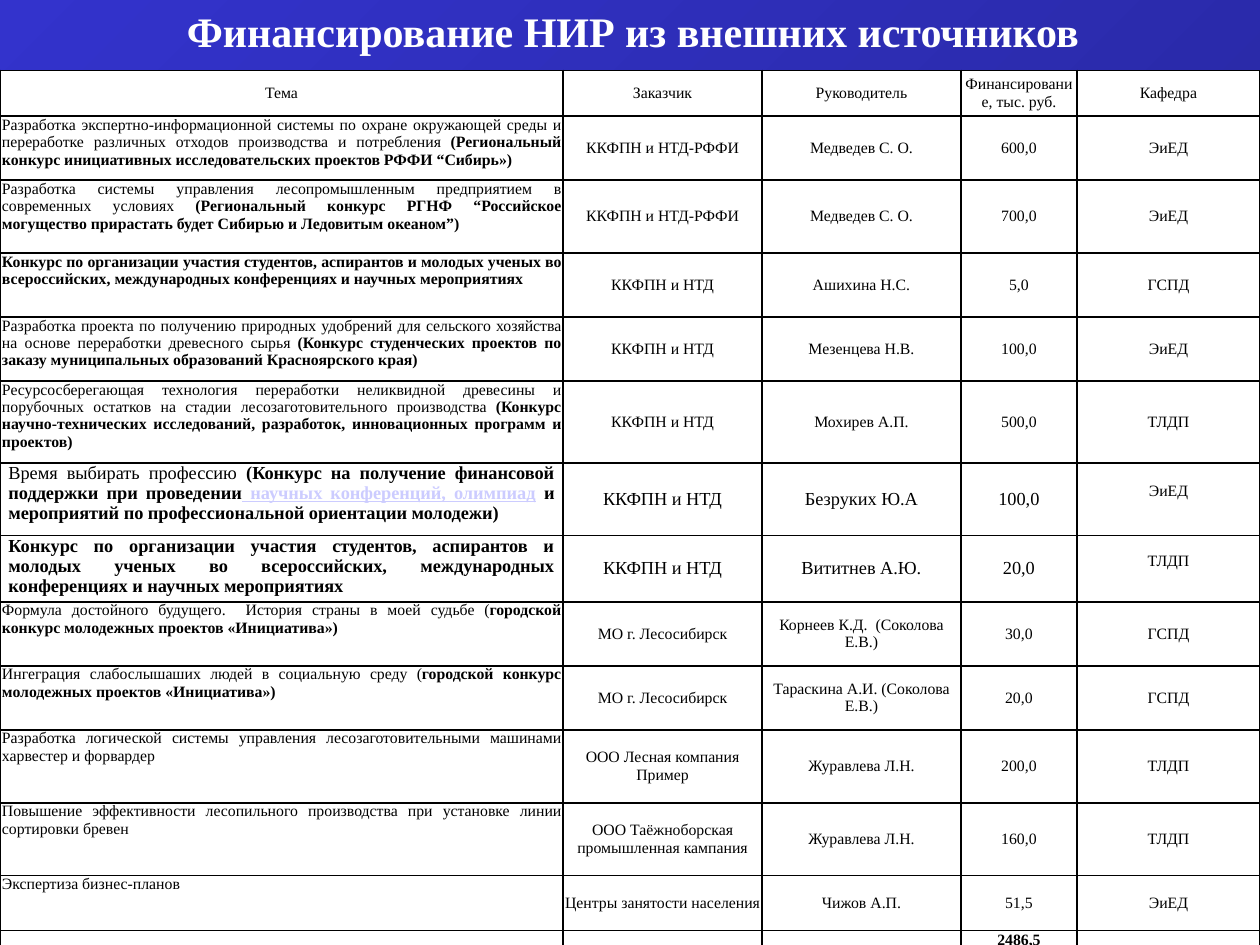
from lxml import etree
from pptx import Presentation
from pptx.dml.color import RGBColor
from pptx.enum import text as t
from pptx.oxml import ns
from pptx.util import Cm, Pt

HUES = {"ink": "000000", "paper": "FFFFFF", "link": "CCCCFF",
        "start": "3333CC", "end": "242492"}
FONT = "Times New Roman"
COLS = [11.35, 4.01, 4.01, 2.34, 3.69]
TALL = [0.92, 1.29, 1.47, 1.29, 1.29, 1.65, 1.47, 1.29, 1.29, 1.29,
        1.47, 1.47, 1.1, 0.36]
LARGE = (6, 7)
FUND = "ККФПН и НТД"
EVENT = ("|Конкурс по организации участия студентов, аспирантов и молодых ученых во "
         "всероссийских, международных конференциях и научных мероприятиях")
YOUTH = "(|городской конкурс молодежных проектов «Инициатива»)"
ROWS = [
    ("Тема", "Заказчик", "Руководитель", "Финансирование, тыс. руб.", "Кафедра"),
    ("Разработка экспертно-информационной системы по охране окружающей среды и "
     "переработке различных отходов производства и потребления |(Региональный "
     "конкурс инициативных исследовательских проектов РФФИ “Сибирь»)",
     FUND + "-РФФИ", "Медведев С. О.", "600,0", "ЭиЕД"),
    ("Разработка системы управления лесопромышленным предприятием в современных "
     "условиях |(Региональный конкурс РГНФ “Российское могущество прирастать "
     "будет Сибирью и Ледовитым океаном”)",
     FUND + "-РФФИ", "Медведев С. О.", "700,0", "ЭиЕД"),
    (EVENT, FUND, "Ашихина Н.С.", "5,0", "ГСПД"),
    ("Разработка проекта по получению природных удобрений для сельского хозяйства "
     "на основе переработки древесного сырья |(Конкурс студенческих проектов по "
     "заказу муниципальных образований Красноярского края)",
     FUND, "Мезенцева Н.В.", "100,0", "ЭиЕД"),
    ("Ресурсосберегающая технология переработки неликвидной древесины и порубочных "
     "остатков на стадии лесозаготовительного производства |(Конкурс "
     "научно-технических исследований, разработок, инновационных программ и проектов)",
     FUND, "Мохирев А.П.", "500,0", "ТЛДП"),
    ("Время выбирать профессию |(Конкурс на получение финансовой поддержки при "
     "проведении| научных конференций, олимпиад| и мероприятий по "
     "профессиональной ориентации молодежи)",
     FUND, "Безруких Ю.А", "100,0", "ЭиЕД"),
    (EVENT, FUND, "Вититнев А.Ю.", "20,0", "ТЛДП"),
    ("Формула достойного будущего.  История страны в моей судьбе " + YOUTH,
     "МО г. Лесосибирск", "Корнеев К.Д.  (Соколова Е.В.)", "30,0", "ГСПД"),
    ("Ингеграция слабослышаших людей в социальную среду " + YOUTH,
     "МО г. Лесосибирск", "Тараскина А.И. (Соколова Е.В.)", "20,0", "ГСПД"),
    ("Разработка логической системы управления лесозаготовительными машинами "
     "харвестер и форвардер",
     "ООО Лесная компания Пример", "Журавлева Л.Н.", "200,0", "ТЛДП"),
    ("Повышение эффективности лесопильного производства при установке линии "
     "сортировки бревен",
     "ООО Таёжноборская промышленная кампания", "Журавлева Л.Н.", "160,0", "ТЛДП"),
    ("Экспертиза бизнес-планов", "Центры занятости населения", "Чижов А.П.",
     "51,5", "ЭиЕД"),
    ("", "", "", "|2486,5", ""),
]


def tint(name):
    """Return the named colour."""
    return RGBColor.from_string(HUES[name])


def style(run, size, hue="ink", bold=False):
    """Set the font of a run."""
    font = run.font
    font.name, font.size, font.bold = FONT, Pt(size), bold
    font.color.rgb = tint(hue)


def paint(slide):
    """Lay the diagonal gradient behind the slide."""
    fill = slide.background.fill
    fill.gradient()
    fill.gradient_angle = 315
    for stop, hue in zip(fill.gradient_stops, ("start", "end")):
        stop.color.rgb = tint(hue)


def title(slide, left, top, width, height):
    """Place the heading in the given box."""
    frame = slide.shapes.add_textbox(left, top, width, height).text_frame
    frame.word_wrap = True
    frame.vertical_anchor = t.MSO_ANCHOR.MIDDLE
    frame.text = "Финансирование НИР из внешних источников"
    para = frame.paragraphs[0]
    para.alignment = t.PP_ALIGN.CENTER
    style(para.runs[0], 24, "paper", True)


def edge(cell):
    """Draw thin borders on all four sides of a cell."""
    props = cell._tc.get_or_add_tcPr()
    for spot, side in enumerate(("lnL", "lnR", "lnT", "lnB")):
        line = etree.Element(ns.qn("a:" + side), w=str(Pt(1)))
        fill = etree.SubElement(line, ns.qn("a:solidFill"))
        etree.SubElement(fill, ns.qn("a:srgbClr"), val=HUES["ink"])
        props.insert(spot, line)


def write(cell, words, size, align):
    """Write parts split by bars: plain, bold, bold link, bold."""
    para = cell.text_frame.paragraphs[0]
    para.alignment = align
    for spot, part in enumerate(words.split("|")):
        if part:
            run = para.add_run()
            run.text = part
            style(run, size, "link" if spot == 2 else "ink", spot > 0)
            run.font.underline = spot == 2
    if not words:
        etree.SubElement(para._p, ns.qn("a:endParaRPr"), sz="900")


def grid(slide, left, top, width, height):
    """Place the funding table in the given box."""
    shape = slide.shapes.add_table(len(ROWS), len(COLS), left, top, width, height)
    table = shape.table
    table.first_row = table.horz_banding = False
    for col, wide in zip(table.columns, COLS):
        col.width = Cm(wide)
    for row, tall in zip(table.rows, TALL):
        row.height = Cm(tall)
    for r, row in enumerate(ROWS):
        for c, words in enumerate(row):
            cell = table.cell(r, c)
            theme = c == 0 and r > 0
            large = r in LARGE and c < 4
            raised = r in LARGE and c == 4
            cell.fill.solid()
            cell.fill.fore_color.rgb = tint("paper")
            edge(cell)
            cell.margin_left = cell.margin_right = Cm(0.17 if large else 0.04)
            cell.margin_top = 0
            cell.margin_bottom = Cm(0.32 if raised else 0)
            cell.vertical_anchor = t.MSO_ANCHOR.TOP if theme else t.MSO_ANCHOR.MIDDLE
            write(cell, words, 10.5 if large else 9,
                  t.PP_ALIGN.JUSTIFY if theme else t.PP_ALIGN.CENTER)


def main():
    """Build and save the slide."""
    deck = Presentation()
    deck.slide_width, deck.slide_height = Cm(25.4), Cm(19.05)
    slide = deck.slides.add_slide(deck.slide_layouts[6])
    paint(slide)
    title(slide, Cm(1.96), Cm(0), Cm(21.6), Cm(1.22))
    grid(slide, Cm(0), Cm(1.42), Cm(sum(COLS)), Cm(sum(TALL)))
    deck.save("out.pptx")


if __name__ == "__main__":
    main()
